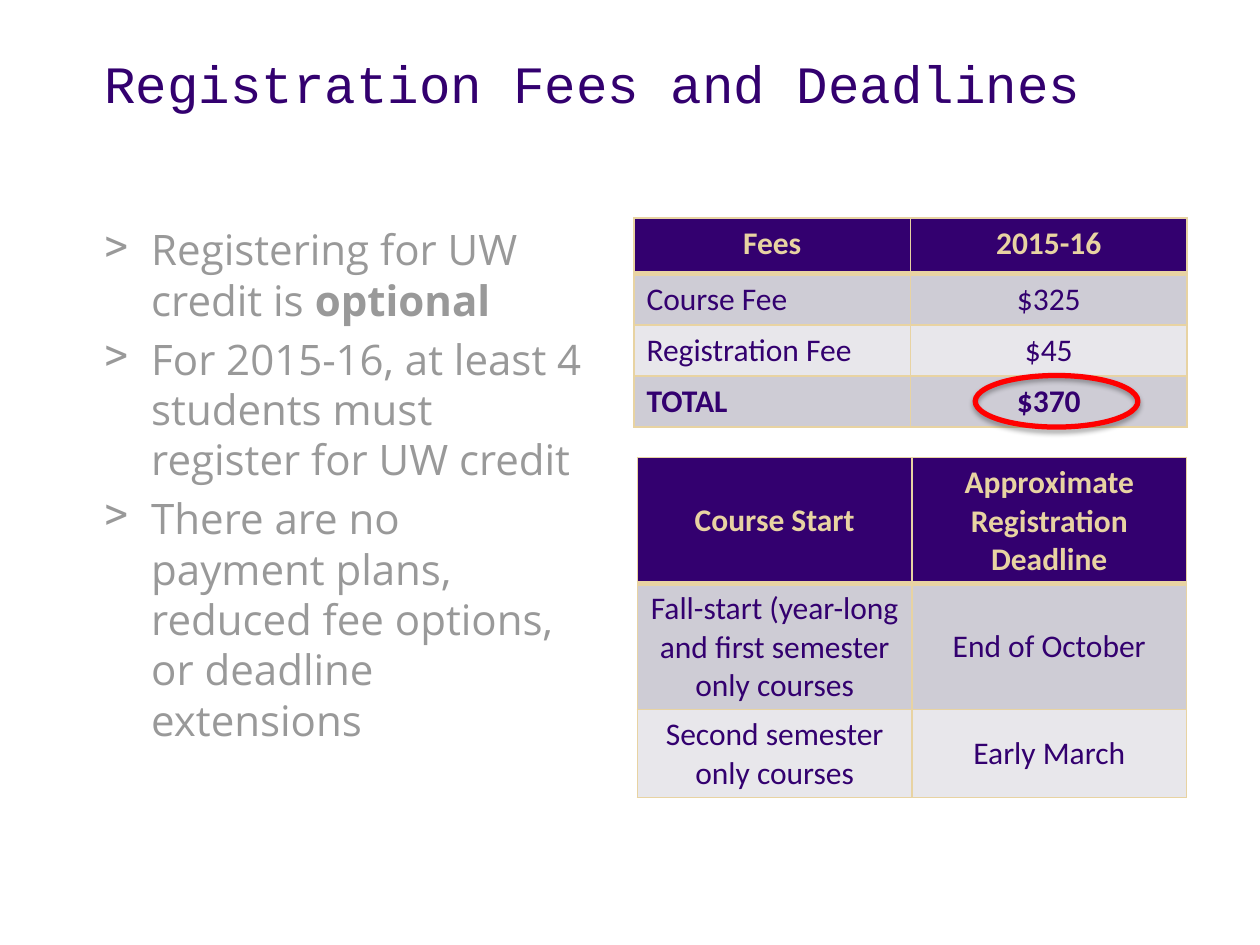
import pptx
import pptx.util
import pptx.dml.color
import pptx.enum.shapes
import pptx.enum.text
import pptx.oxml
from lxml import etree
from pptx.util import Cm

PURPLE, GOLD, GREY, RED = "33006F", "E8D3A2", "999999", "FF0000"
BANDS = ("CECCD5", "E8E7EB")
ALIGN = pptx.enum.text.PP_ALIGN
ANCHOR = pptx.enum.text.MSO_ANCHOR
NS = 'xmlns:a="http://schemas.openxmlformats.org/drawingml/2006/main"'


def rgb(value):
    return pptx.dml.color.RGBColor.from_string(value)


def add_text(paragraph, text, font="Calibri", size=18, color=PURPLE, bold=False):
    run = paragraph.add_run()
    run.text = text
    run.font.name = font
    run.font.size = pptx.util.Pt(size)
    run.font.color.rgb = rgb(color)
    run.font.bold = bold


class Deck:
    """Holds the style and the current slide."""

    def __init__(self, width, height):
        self.prs = pptx.Presentation()
        self.prs.slide_width, self.prs.slide_height = width, height
        self.slide = self.prs.slides.add_slide(self.prs.slide_layouts[6])

    def text_frame(self, left, top, width, height):
        frame = self.slide.shapes.add_textbox(left, top, width, height).text_frame
        frame.word_wrap = True
        return frame

    def title(self, text, *place):
        heading = self.text_frame(*place).paragraphs[0]
        heading.line_spacing = 0.9
        add_text(heading, text, font="Courier New", size=30)

    def bullets(self, items, *place):
        frame = self.text_frame(*place)
        for number, pieces in enumerate(items):
            point = frame.add_paragraph() if number else frame.paragraphs[0]
            properties = point._p.get_or_add_pPr()
            properties.set("marL", str(Cm(0.95)))
            properties.set("indent", str(-Cm(0.95)))
            etree.SubElement(properties, pptx.oxml.ns.qn("a:buChar")).set("char", ">")
            if number:
                point.space_before = pptx.util.Pt(4.8)
            for text, bold in pieces:
                add_text(point, text, font="Open Sans", size=24, color=GREY, bold=bold)

    def border(self, cell, side, points):
        cell._tc.get_or_add_tcPr().append(pptx.oxml.parse_xml(
            f'<a:ln{side} {NS} w="{pptx.util.Pt(points)}"><a:solidFill>'
            f'<a:srgbClr val="{GOLD}"/></a:solidFill></a:ln{side}>'))

    def table(self, rows, heights, left, top, width, anchor=ANCHOR.TOP,
              first_column=ALIGN.CENTER, bold_last=False):
        frame = self.slide.shapes.add_table(len(rows), len(rows[0]), left, top,
                                            width, sum(heights))
        grid = frame.table
        for r, (row, height) in enumerate(zip(rows, heights)):
            grid.rows[r].height = height
            header = r == 0
            for c, text in enumerate(row):
                cell = grid.cell(r, c)
                cell.vertical_anchor = anchor
                entry = cell.text_frame.paragraphs[0]
                entry.alignment = ALIGN.CENTER if header or c else first_column
                add_text(entry, text, color=GOLD if header else PURPLE,
                         bold=header or (bold_last and r == len(rows) - 1))
                # A heavier rule separates the header from the body
                for side, points in (("L", 1), ("R", 1), ("T", 3 if r == 1 else 1),
                                     ("B", 3 if header else 1)):
                    self.border(cell, side, points)
                cell.fill.solid()
                cell.fill.fore_color.rgb = rgb(PURPLE if header else BANDS[(r - 1) % 2])

    def ring(self, *place):
        ring = self.slide.shapes.add_shape(pptx.enum.shapes.MSO_SHAPE.OVAL, *place)
        ring.fill.background()
        ring.line.color.rgb = rgb(RED)
        ring.line.width = pptx.util.Pt(3)
        ring.shadow.inherit = False
        effects = ring._element.spPr.find(pptx.oxml.ns.qn("a:effectLst"))
        effects.append(pptx.oxml.parse_xml(
            f'<a:outerShdw {NS} blurRad="{pptx.util.Pt(3.1)}" dist="{pptx.util.Pt(1.8)}" '
            'dir="5400000" rotWithShape="0"><a:srgbClr val="000000">'
            '<a:alpha val="35000"/></a:srgbClr></a:outerShdw>'))


def main():
    deck = Deck(Cm(25.4), Cm(19.05))

    # Heading and key points
    deck.title("Registration Fees and Deadlines", Cm(1.85), Cm(1.04), Cm(22.73), Cm(2.74))
    deck.bullets([
        [("Registering for UW credit is ", False), ("optional", True)],
        [("For 2015-16, at least 4 students must register for UW credit", False)],
        [("There are no payment plans, reduced fee options, or deadline extensions", False)],
    ], Cm(1.85), Cm(4.39), Cm(10.16), Cm(13.23))

    # Fees, with the total circled
    fees = [("Fees", "2015-16"), ("Course Fee", "$325"),
            ("Registration Fee", "$45"), ("TOTAL", "$370")]
    deck.table(fees, [Cm(1.13)] + [Cm(1.03)] * 3, Cm(12.78), Cm(4.39), Cm(11.15),
               first_column=ALIGN.LEFT, bold_last=True)
    deck.ring(Cm(19.66), Cm(7.57), Cm(3.28), Cm(1.04))

    # Deadlines
    deadlines = [("Course Start", "Approximate Registration Deadline"),
                 ("Fall-start (year-long and first semester only courses", "End of October"),
                 ("Second semester only courses", "Early March")]
    deck.table(deadlines, [Cm(2.31), Cm(2.31), Cm(1.6)], Cm(12.85), Cm(9.22), Cm(11.07),
               anchor=ANCHOR.MIDDLE)

    deck.prs.save("out.pptx")


if __name__ == "__main__":
    main()
